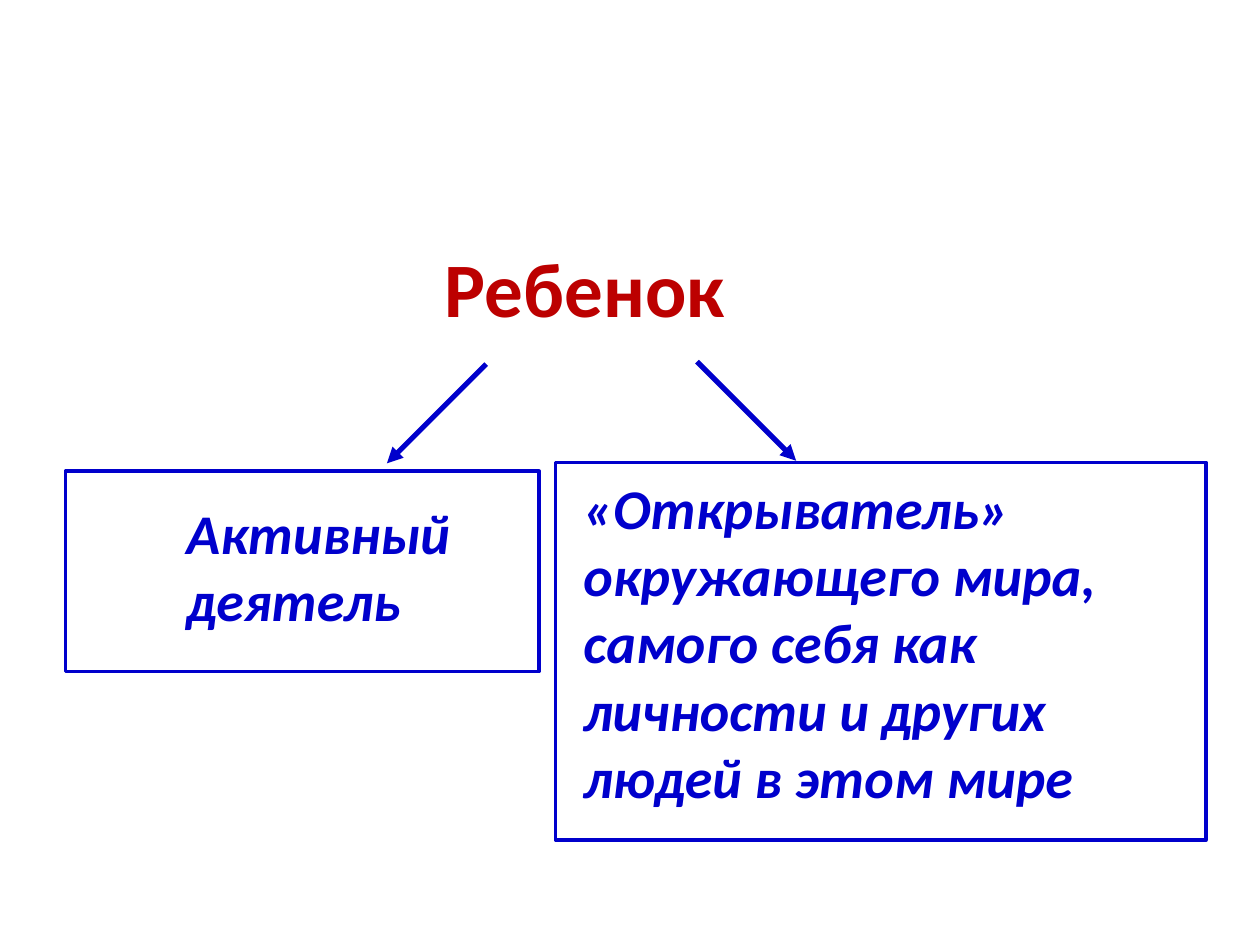
from dataclasses import dataclass

from lxml.etree import SubElement
from pptx import Presentation
from pptx.dml.color import RGBColor
from pptx.enum.shapes import MSO_CONNECTOR, MSO_SHAPE
from pptx.enum.text import MSO_ANCHOR, MSO_AUTO_SIZE, PP_ALIGN
from pptx.oxml.ns import qn
from pptx.util import Cm, Pt

COLORS = {"title": "BC0000", "accent": "0000CC", "box": "FFFFFF"}
FONT = "Calibri"


@dataclass
class Area:
    left: float
    top: float
    width: float
    height: float

    def lengths(self) -> list:
        return [Cm(v) for v in (self.left, self.top, self.width, self.height)]


@dataclass
class Role:
    frame: Area
    text_area: Area
    lines: list
    wrap: bool


@dataclass
class Arrow:
    x: float
    y: float
    dx: float
    dy: float


def rgb(name: str) -> RGBColor:
    return RGBColor.from_string(COLORS[name])


def write(tf, lines: list, *, size: int, color: str, italic: bool = False,
          align=PP_ALIGN.LEFT, wrap: bool = True, fit=MSO_AUTO_SIZE.NONE) -> None:
    tf.word_wrap = wrap
    tf.auto_size = fit
    tf.vertical_anchor = MSO_ANCHOR.TOP
    for i, line in enumerate(lines):
        p = tf.paragraphs[0] if i == 0 else tf.add_paragraph()
        p.alignment = align
        r = p.add_run()
        r.text = line
        r.font.name = FONT
        r.font.size = Pt(size)
        r.font.bold = True
        r.font.italic = italic
        r.font.color.rgb = rgb(color)


def draw_frame(s, area: Area) -> None:
    sp = s.shapes.add_shape(MSO_SHAPE.RECTANGLE, *area.lengths())
    sp.shadow.inherit = False
    sp.fill.solid()
    sp.fill.fore_color.rgb = rgb("box")
    sp.line.color.rgb = rgb("accent")
    sp.line.width = Pt(2)


def draw_role_text(s, role: Role) -> None:
    tb = s.shapes.add_textbox(*role.text_area.lengths())
    write(tb.text_frame, role.lines, size=32, color="accent", italic=True,
          wrap=role.wrap, fit=MSO_AUTO_SIZE.SHAPE_TO_FIT_TEXT)


def draw_arrow(s, arrow: Arrow) -> None:
    c = s.shapes.add_connector(MSO_CONNECTOR.STRAIGHT, Cm(arrow.x), Cm(arrow.y),
                               Cm(arrow.x + arrow.dx), Cm(arrow.y + arrow.dy))
    c.line.color.rgb = rgb("accent")
    c.line.width = Pt(3)
    SubElement(c.line._get_or_add_ln(), qn("a:tailEnd"), type="triangle")
    SubElement(c._element.spPr, qn("a:effectLst"))


ROLES = [
    Role(Area(11.2, 9.32, 13.11, 7.62), Area(11.51, 9.42, 12.7, 7.09),
         ["«Открыватель» окружающего мира, самого себя как личности и других "
          "людей в этом мире"], True),
    Role(Area(1.32, 9.5, 9.55, 4.04), Area(3.51, 9.93, 6.15, 3),
         ["Активный", "деятель"], False),
]
ARROWS = [Arrow(9.8, 7.34, -2, 2), Arrow(14.05, 7.29, 2, 2)]


def main() -> None:
    prs = Presentation()
    prs.slide_width, prs.slide_height = Cm(25.4), Cm(19.05)
    s = prs.slides.add_slide(prs.slide_layouts[5])

    # Title
    title = s.shapes.title
    title.left, title.top, title.width, title.height = Area(
        8.1, 4.72, 7.37, 2.13).lengths()
    write(title.text_frame, ["Ребенок"], size=44, color="title",
          align=PP_ALIGN.CENTER)

    # Frames, then arrows from the title, then the role texts
    for role in ROLES:
        draw_frame(s, role.frame)
    for arrow in ARROWS:
        draw_arrow(s, arrow)
    for role in ROLES:
        draw_role_text(s, role)

    prs.save("out.pptx")


if __name__ == "__main__":
    main()
